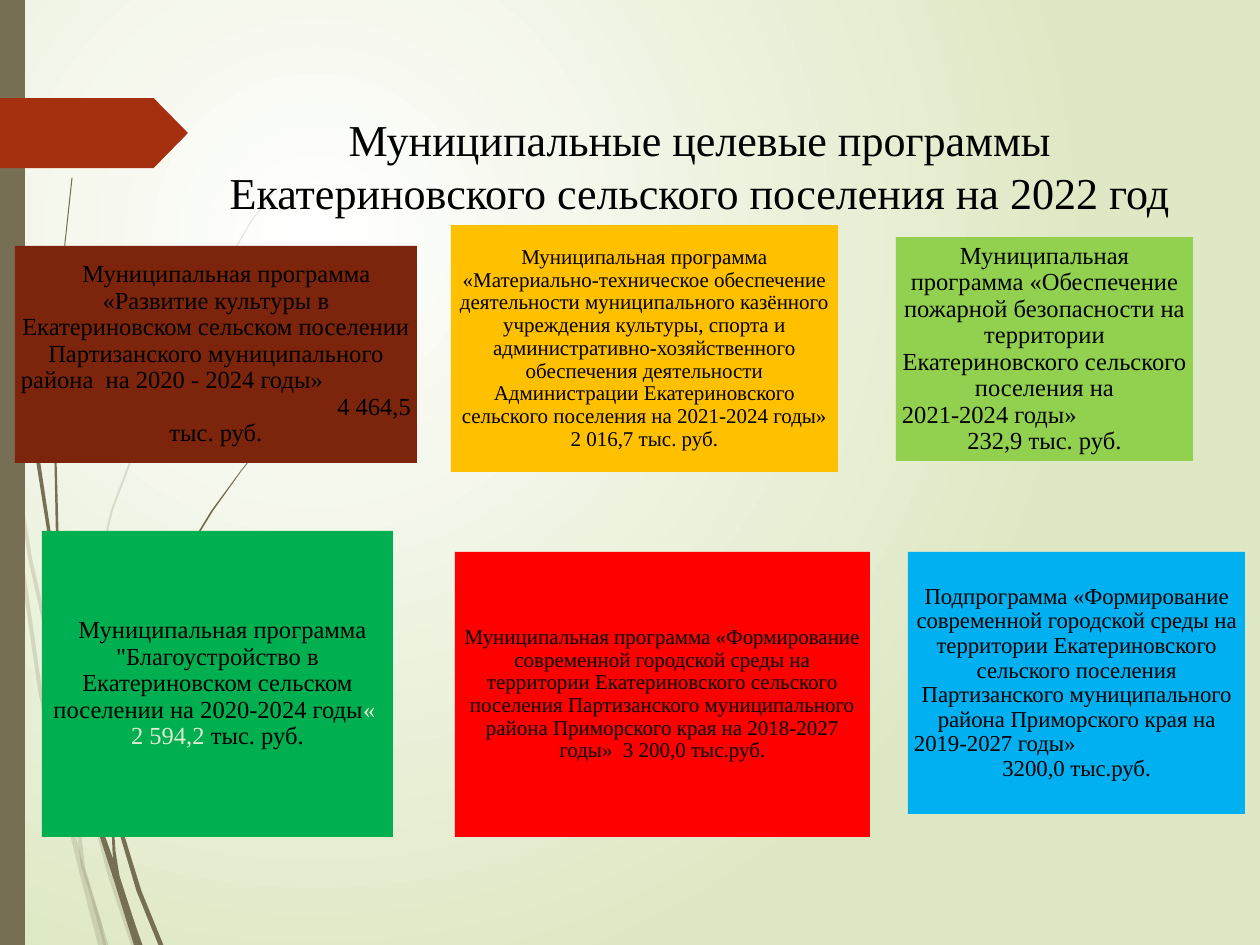
import pptx
import pptx.util
import pptx.oxml
import pptx.oxml.ns
import pptx.dml.color
import pptx.enum.shapes
import pptx.enum.text
from lxml import etree

RGB = pptx.dml.color.RGBColor
SHAPES = pptx.enum.shapes.MSO_SHAPE
ALIGN = pptx.enum.text.PP_ALIGN
ANCHOR = pptx.enum.text.MSO_ANCHOR

PX = 914400 // 126
FONT = "Times New Roman"
BLACK = RGB(0x00, 0x00, 0x00)
OLIVE = RGB(0x76, 0x6F, 0x54)
RUST = RGB(0xA5, 0x30, 0x10)
PALE = RGB(0xE3, 0xEA, 0xCF)
BROWN = RGB(0x7C, 0x24, 0x0C)
AMBER = RGB(0xFF, 0xC0, 0x00)
LIME = RGB(0x92, 0xD0, 0x50)
GREEN = RGB(0x00, 0xB0, 0x50)
RED = RGB(0xFF, 0x00, 0x00)
BLUE = RGB(0x00, 0xB0, 0xF0)
LEFT, CENTER, RIGHT = ALIGN.LEFT, ALIGN.CENTER, ALIGN.RIGHT


def paint(shape, color):
    shape.shadow.inherit = False
    shape.fill.solid()
    shape.fill.fore_color.rgb = color
    shape.line.fill.background()


def add_span(para, text, size, color):
    span = para.add_run()
    span.text = text
    span.font.name = FONT
    span.font.size = pptx.util.Pt(size)
    span.font.color.rgb = color


deck = pptx.Presentation()
deck.slide_width = 1260 * PX
deck.slide_height = 945 * PX
page = deck.slides.add_slide(deck.slide_layouts[5])

# Background: radial gradient
page.background.fill.solid()
solid = page.element.find(".//" + pptx.oxml.ns.qn("a:solidFill"))
solid.getparent().replace(solid, pptx.oxml.parse_xml(
    '<a:gradFill xmlns:a="http://schemas.openxmlformats.org/drawingml/2006/main">'
    '<a:gsLst><a:gs pos="0"><a:srgbClr val="FFFFFF"/></a:gs>'
    '<a:gs pos="100000"><a:srgbClr val="DFE8C4"/></a:gs></a:gsLst>'
    '<a:path path="circle"><a:fillToRect l="50000" t="50000" r="100000" b="100000"/>'
    '</a:path></a:gradFill>'))

# Grass stems: opacity in percent, then (centre x, y, width) along each stem
stems = [
    (20, [(2, 368, 2), (7, 410, 2), (10, 441, 2), (17, 533, 4), (26, 592, 4),
          (40, 690, 4), (59, 781, 4), (81, 867, 6), (96, 920, 9), (102, 945, 8)]),
    (20, [(14, 453, 2), (30, 558, 4), (52, 656, 4), (74, 750, 2), (77, 814, 4),
          (83, 867, 4), (92, 896, 3), (106, 945, 5)]),
    (20, [(273, 193, 1), (252, 220, 1), (235, 249, 1), (200, 308, 2), (167, 372, 2),
          (139, 439, 2), (112, 510, 2), (95, 581, 2), (82, 658, 2), (76, 736, 2),
          (76, 755, 2), (82, 768, 3), (109, 873, 4), (133, 945, 4)]),
    (100, [(3, 0, 1), (6, 139, 1), (18, 293, 1), (36, 447, 4), (58, 590, 3),
           (64, 640, 4), (73, 701, 5), (85, 768, 5), (100, 829, 5), (118, 882, 7),
           (138, 945, 8)]),
    (100, [(72, 178, 1), (65, 243, 1), (60, 309, 1), (55, 440, 2), (58, 566, 3),
           (62, 595, 1)]),
    (100, [(272, 433, 1), (256, 452, 1), (241, 471, 1), (212, 511, 2), (187, 552, 2),
           (164, 598, 2), (144, 645, 2), (129, 695, 2), (118, 745, 3), (113, 796, 4),
           (117, 818, 4), (139, 891, 5), (161, 945, 5)]),
    (100, [(112, 814, 2), (114, 851, 3), (117, 876, 5), (126, 906, 4), (140, 945, 5)]),
]
for opacity, points in stems:
    edge = [(x - w / 2, y) for x, y, w in points]
    edge += [(x + w / 2, y) for x, y, w in reversed(points)]
    outline = [(round(x * PX), y * PX) for x, y in edge]
    builder = page.shapes.build_freeform(*outline[0], scale=1.0)
    builder.add_line_segments(outline[1:], close=True)
    stem = builder.convert_to_shape()
    paint(stem, OLIVE)
    if opacity < 100:
        tint = stem.element.spPr.find(".//" + pptx.oxml.ns.qn("a:srgbClr"))
        etree.SubElement(tint, pptx.oxml.ns.qn("a:alpha"), val=str(opacity * 1000))

# Side bar and arrow tag
bar = page.shapes.add_shape(SHAPES.RECTANGLE, 0, 0, 25 * PX, 945 * PX)
paint(bar, OLIVE)
tag = page.shapes.add_shape(SHAPES.PENTAGON, 0, 98 * PX, 188 * PX, 70 * PX)
tag.adjustments[0] = 0.49
paint(tag, RUST)

# Title, in front of the stems
title = page.shapes.title
title.element.getparent().append(title.element)
title.left, title.top, title.width, title.height = (
    203 * PX, 106 * PX, 994 * PX, 126 * PX)
frame = title.text_frame
frame.word_wrap = True
frame.auto_size = pptx.enum.text.MSO_AUTO_SIZE.NONE
frame.vertical_anchor = ANCHOR.TOP
frame.paragraphs[0].alignment = CENTER
add_span(frame.paragraphs[0], "Муниципальные целевые программы "
         "Екатериновского сельского поселения на 2022 год", 25.2, BLACK)

# Programme cards: place, fill, text size, first-line indent, then paragraphs
# as (alignment, [(text, colour), ...])
cards = [
    ((15, 246, 402, 217), BROWN, 14, 21, [
        (CENTER, [("Муниципальная программа «Развитие культуры в Екатериновском "
                   "сельском поселении Партизанского муниципального", BLACK)]),
        (LEFT, [("района  на 2020 - 2024 годы»", BLACK)]),
        (RIGHT, [("4 464,5", BLACK)]),
        (CENTER, [("тыс. руб.", BLACK)])]),
    ((451, 225, 387, 247), AMBER, 12, 0, [
        (CENTER, [("Муниципальная программа «Материально-техническое обеспечение "
                   "деятельности муниципального казённого учреждения культуры, "
                   "спорта и административно-хозяйственного обеспечения "
                   "деятельности Администрации Екатериновского сельского "
                   "поселения на 2021-2024 годы» 2 016,7 тыс. руб.", BLACK)])]),
    ((896, 237, 297, 224), LIME, 14, 0, [
        (CENTER, [("Муниципальная программа «Обеспечение пожарной безопасности на "
                   "территории Екатериновского сельского поселения на", BLACK)]),
        (LEFT, [("2021-2024 годы»", BLACK)]),
        (CENTER, [("232,9 тыс. руб.", BLACK)])]),
    ((42, 531, 351, 306), GREEN, 14, 10, [
        (CENTER, [("Муниципальная программа \"Благоустройство в Екатериновском "
                   "сельском поселении на 2020-2024 годы", BLACK),
                  ("«  2 594,2", PALE), (" тыс. руб.", BLACK)])]),
    ((455, 552, 415, 285), RED, 12, 0, [
        (CENTER, [("Муниципальная программа «Формирование современной городской "
                   "среды на территории Екатериновского сельского поселения "
                   "Партизанского муниципального района Приморского края на "
                   "2018-2027 годы»  3 200,0 тыс.руб.", BLACK)])]),
    ((908, 552, 337, 262), BLUE, 13, 0, [
        (CENTER, [("Подпрограмма «Формирование современной городской среды на "
                   "территории Екатериновского сельского поселения Партизанского "
                   "муниципального района Приморского края на", BLACK)]),
        (LEFT, [("2019-2027 годы»", BLACK)]),
        (CENTER, [("3200,0 тыс.руб.", BLACK)])]),
]
for place, color, size, indent, paras in cards:
    card = page.shapes.add_shape(SHAPES.RECTANGLE, *(n * PX for n in place))
    paint(card, color)
    frame = card.text_frame
    frame.word_wrap = True
    frame.vertical_anchor = ANCHOR.MIDDLE
    frame.margin_left = frame.margin_right = 6 * PX
    frame.margin_top = frame.margin_bottom = 6 * PX
    for number, (alignment, spans) in enumerate(paras):
        para = frame.add_paragraph() if number else frame.paragraphs[0]
        para.alignment = alignment
        para.line_spacing = 0.9
        if indent and number == 0:
            para._p.get_or_add_pPr().set("indent", str(indent * PX))
        for text, span_color in spans:
            add_span(para, text, size, span_color)

deck.save("out.pptx")
